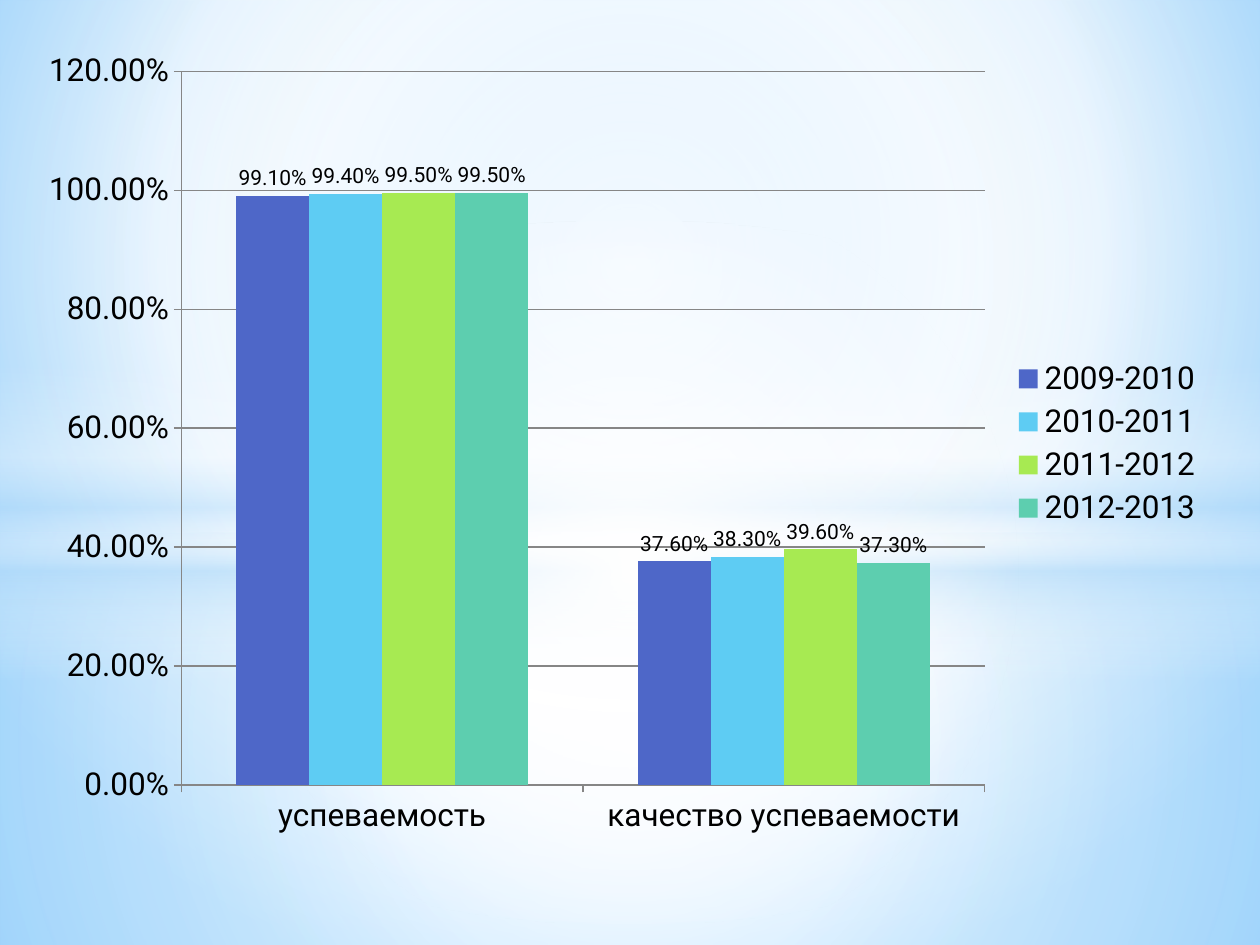
"""Build a slide with a clustered column chart of school results by year."""
from lxml import etree
from pptx import Presentation
from pptx import util as u
from pptx.chart.data import CategoryChartData
from pptx.dml.color import RGBColor
from pptx.enum import chart as ch, shapes
from pptx.oxml.ns import nsdecls, qn

CATEGORIES = ["успеваемость", "качество успеваемости"]
SERIES = [
    ("2009-2010", (0.991, 0.376), "indigo"),
    ("2010-2011", (0.994, 0.383), "sky"),
    ("2011-2012", (0.995, 0.396), "lime"),
    ("2012-2013", (0.995, 0.373), "teal"),
]
COLORS = {
    "indigo": "4E67C8", "sky": "5ECCF3", "lime": "A7EA52", "teal": "5DCEAF",
    "text": "000000", "line": "868686", "white": "FFFFFF", "haze": "B4DCFA",
    "pale": "9ED5FF", "blue": "5BB9FF",
}
FONT = "Roboto"
PERCENT = "0.00%"
CHART_BOX = (14.4, 20.9, 680.4, 465.1)
CENTER = (50, 50, 50, 50)
BACKDROP = ([(0, "pale", 100), (60, "white", 100), (100, "blue", 100)], (20, 10, 20, 60))
RECT, OVAL = shapes.MSO_SHAPE.RECTANGLE, shapes.MSO_SHAPE.OVAL
GLOWS = [
    (RECT, (0, 304.6, 720, 235.4),
     [(0, "white", 91), (37, "white", 76), (100, "haze", 79)], CENTER),
    (RECT, (0, 0, 720, 304.6),
     [(0, "white", 89), (48, "white", 62), (100, "haze", 79)], CENTER),
    (RECT, (0, 208.8, 720, 180),
     [(0, "white", 0), (29, "white", 30), (45, "haze", 40),
      (55, "white", 26), (65, "haze", 60), (100, "white", 0)], None),
    (OVAL, (0, 126, 720, 401.8), [(0, "white", 100), (54, "white", 0)], CENTER),
]


def rgb(name):
    return RGBColor.from_string(COLORS[name])


def set_gradient(parent, stops, focus):
    gs = "".join(
        f'<a:gs pos="{pos * 1000}"><a:srgbClr val="{COLORS[name]}">'
        f'<a:alpha val="{alpha * 1000}"/></a:srgbClr></a:gs>'
        for pos, name, alpha in stops)
    if focus:
        sides = " ".join(f'{k}="{v * 1000}"' for k, v in zip("ltrb", focus))
        shade = f'<a:path path="circle"><a:fillToRect {sides}/></a:path>'
    else:
        shade = '<a:lin ang="5400000" scaled="0"/>'
    grad = etree.fromstring(
        f'<a:gradFill {nsdecls("a")} rotWithShape="1"><a:gsLst>{gs}</a:gsLst>{shade}</a:gradFill>')
    parent.replace(parent.find(qn("a:solidFill")), grad)


def add_glow(s, kind, box, stops, focus):
    sp = s.shapes.add_shape(kind, *map(u.Pt, box))
    sp.shadow.inherit = False
    sp.line.fill.background()
    sp.fill.solid()
    set_gradient(sp.element.spPr, stops, focus)


def set_font(font, size):
    font.name, font.size = FONT, u.Pt(size)
    font.color.rgb = rgb("text")


def set_line(line):
    line.color.rgb = rgb("line")
    line.width = u.Pt(0.75)


def add_results_chart(s):
    data = CategoryChartData(number_format=PERCENT)
    data.categories = CATEGORIES
    for name, values, _ in SERIES:
        data.add_series(name, values)
    chart = s.shapes.add_chart(
        ch.XL_CHART_TYPE.COLUMN_CLUSTERED, *map(u.Pt, CHART_BOX), data).chart
    set_font(chart.font, 18)
    chart.has_title = False
    chart.has_legend = True
    chart.legend.position = ch.XL_LEGEND_POSITION.RIGHT
    chart.legend.include_in_layout = False

    for axis in (chart.category_axis, chart.value_axis):
        axis.major_tick_mark = ch.XL_TICK_MARK.OUTSIDE
        axis.minor_tick_mark = ch.XL_TICK_MARK.NONE
        set_line(axis.format.line)
    chart.value_axis.has_major_gridlines = True
    set_line(chart.value_axis.major_gridlines.format.line)
    chart.value_axis.tick_labels.number_format = PERCENT
    chart.value_axis.tick_labels.number_format_is_linked = False

    plot = chart.plots[0]
    plot.gap_width, plot.overlap, plot.vary_by_categories = 150, 0, False
    for series, (_, _, color) in zip(plot.series, SERIES):
        series.format.fill.solid()
        series.format.fill.fore_color.rgb = rgb(color)
        labels = series.data_labels
        labels.show_value = True
        labels.position = ch.XL_LABEL_POSITION.OUTSIDE_END
        labels.number_format = PERCENT
        labels.number_format_is_linked = False
        set_font(labels.font, 12)


def main():
    prs = Presentation()
    prs.slide_width, prs.slide_height = u.Pt(720), u.Pt(540)
    s = prs.slides.add_slide(prs.slide_layouts[6])
    s.background.fill.solid()
    set_gradient(s.element.find(".//" + qn("p:bgPr")), *BACKDROP)
    for glow in GLOWS:
        add_glow(s, *glow)
    add_results_chart(s)
    prs.save("out.pptx")


if __name__ == "__main__":
    main()
